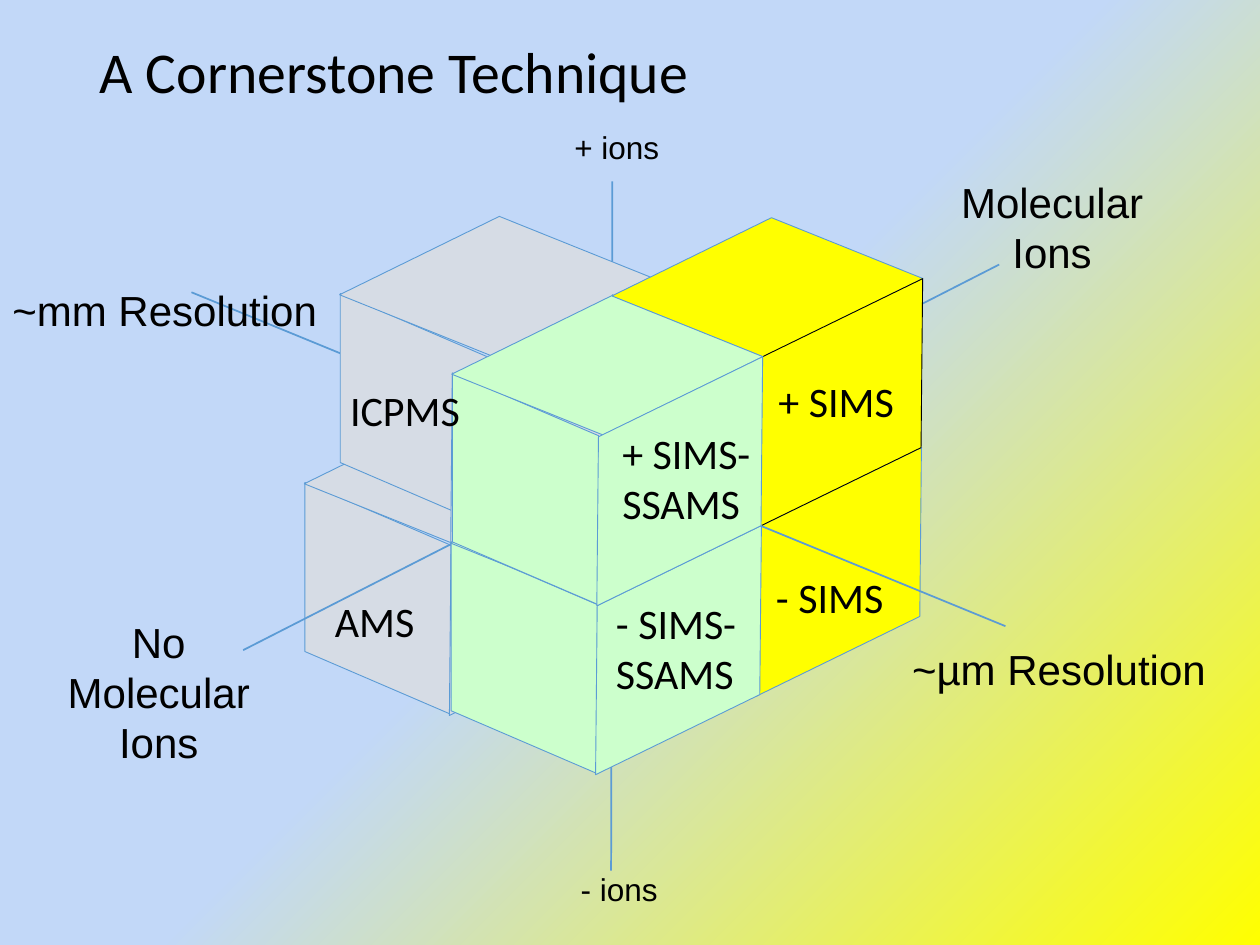
from dataclasses import dataclass

from lxml import etree
from pptx import Presentation
from pptx.dml.color import RGBColor
from pptx.enum.shapes import MSO_CONNECTOR, MSO_SHAPE
from pptx.enum.text import MSO_ANCHOR, MSO_AUTO_SIZE, PP_ALIGN
from pptx.oxml.ns import qn
from pptx.util import Inches, Pt

STRAIGHT = MSO_CONNECTOR.STRAIGHT
PARALLELOGRAM = MSO_SHAPE.PARALLELOGRAM
LEFT, CENTER = PP_ALIGN.LEFT, PP_ALIGN.CENTER
MIDDLE = MSO_ANCHOR.MIDDLE
NO_AUTOFIT = MSO_AUTO_SIZE.NONE
TITLE_ONLY = 5
COLUMNS, ROWS = 100, 75


@dataclass(frozen=True)
class Theme:
    sky: str = "C2D8F8"
    yellow: str = "FFFF00"
    grey: str = "D6DCE5"
    green: str = "CCFFCC"
    blue: str = "5B9BD5"
    black: str = "000000"
    axis_font: str = "Arial"
    body_font: str = "Calibri"
    title_size: float = 33
    label_size: float = 24
    small_size: float = 18
    axis_width: float = 1
    edge_width: float = 0.5


# Each face: offset from the cube's left face, size, rotation, slant
LEFT_FACE = ((0, 0), (18.4, 11.6), 90, 0.43)
TOP_FACE = ((4.5, -9.25), (22.4, 10.5), 21.9, 0.9)
RIGHT_FACE = ((11.2, -0.8), (20.5, 12), -26, 0.5)


class CubeSlide:
    def __init__(self, deck, theme):
        self.theme = theme
        self.column = deck.slide_width / COLUMNS
        self.row = deck.slide_height / ROWS
        self.slide = deck.slides.add_slide(deck.slide_layouts[TITLE_ONLY])

    def place(self, left, top, width, height):
        return (round(left * self.column), round(top * self.row),
                round(width * self.column), round(height * self.row))

    def background(self):
        fill = self.slide.background.fill
        fill.gradient()
        fill.gradient_angle = 315
        stops = ((0.5, self.theme.sky), (1, self.theme.yellow))
        for stop, (position, color) in zip(fill.gradient_stops, stops):
            stop.position = position
            stop.color.rgb = RGBColor.from_string(color)

    def set_text(self, frame, text, size, font, align=LEFT):
        frame.text = text
        for paragraph in frame.paragraphs:
            paragraph.alignment = align
            for run in paragraph.runs:
                run.font.size = Pt(size)
                run.font.name = font
                run.font.color.rgb = RGBColor.from_string(self.theme.black)

    def title(self, text, *box):
        heading = self.slide.shapes.title
        heading.left, heading.top, heading.width, heading.height = self.place(*box)
        frame = heading.text_frame
        self.set_text(frame, text, self.theme.title_size, self.theme.body_font)
        frame.auto_size = NO_AUTOFIT
        frame.vertical_anchor = MIDDLE
        frame.paragraphs[0].line_spacing = 0.9

    def outline(self, line, color, width):
        line.color.rgb = RGBColor.from_string(color)
        line.width = Pt(width)

    def axis(self, *ends):
        axis = self.slide.shapes.add_connector(STRAIGHT, *self.place(*ends))
        self.outline(axis.line, self.theme.blue, self.theme.axis_width)
        etree.SubElement(axis.element.spPr, qn("a:effectLst"))

    def face(self, left, top, geometry, color, edge):
        (dx, dy), size, rotation, slant = geometry
        face = self.slide.shapes.add_shape(
            PARALLELOGRAM, *self.place(left + dx, top + dy, *size))
        face.adjustments[0] = slant
        face.rotation = rotation
        face.shadow.inherit = False
        face.fill.solid()
        face.fill.fore_color.rgb = RGBColor.from_string(color)
        self.outline(face.line, edge, self.theme.edge_width)

    def cube(self, left, top, color, right_edge=None, right_shift=(0, 0)):
        """Draw three faces; right_shift moves the right face off its usual place."""
        blue = self.theme.blue
        self.face(left, top, LEFT_FACE, color, blue)
        self.face(left, top, TOP_FACE, color, blue)
        self.face(left + right_shift[0], top + right_shift[1], RIGHT_FACE,
                  color, right_edge or blue)

    def label(self, text, box, font, size=None, align=LEFT, wrap=False):
        frame = self.slide.shapes.add_textbox(*self.place(*box)).text_frame
        frame.word_wrap = wrap
        self.set_text(frame, text, size or self.theme.label_size, font, align)


def main():
    deck = Presentation()
    deck.slide_width, deck.slide_height = Inches(10), Inches(7.5)
    theme = Theme()
    page = CubeSlide(deck, theme)
    page.background()
    page.title("A Cornerstone Technique", 6.9, 2.1, 86.2, 7.6)

    # Back to front: each axis runs behind the cubes that follow it
    page.axis(48.6, 14.4, 48.5, 69.1)
    page.cube(20.8, 41.7, theme.grey)
    page.axis(19.3, 51.6, 79.3, 21)
    page.cube(45.1, 40.2, theme.yellow)
    page.axis(15.2, 23.2, 79.8, 49.7)
    page.cube(23.6, 26.7, theme.grey, right_shift=(-2.7, 1.5))
    page.cube(45.2, 26.8, theme.yellow, right_edge=theme.black)
    page.cube(32.4, 46.4, theme.green)
    page.cube(32.5, 33, theme.green)

    for ions, box in (("+ ions", (44.6, 9.7, 8.9, 4)),
                      ("- ions", (45.1, 68.6, 8.2, 4))):
        page.label(ions, box, theme.axis_font, theme.small_size)

    for meaning, box, align in (
            ("Molecular\nIons", (75.2, 13.5, 16.6, 9.1), CENTER),
            ("No\nMolecular\nIons", (4.3, 48.4, 16.6, 13.1), CENTER),
            ("~µm Resolution", (71.4, 50.6, 25.6, 5), LEFT),
            ("~mm Resolution", (0, 22.1, 26.4, 5), LEFT)):
        page.label(meaning, box, theme.axis_font, align=align)

    for technique, box in (("ICPMS", (26.8, 30, 11.3, 5)),
                           ("AMS", (25.6, 46.8, 9.6, 5)),
                           ("+ SIMS-SSAMS", (48.4, 33.4, 12.2, 9.1)),
                           ("- SIMS-SSAMS", (47.9, 46.9, 12.2, 9.1)),
                           ("+ SIMS", (60.8, 29.3, 12.2, 5)),
                           ("- SIMS", (60.6, 44.9, 12.2, 5))):
        page.label(technique, box, theme.body_font, wrap=True)

    deck.save("out.pptx")


if __name__ == "__main__":
    main()
